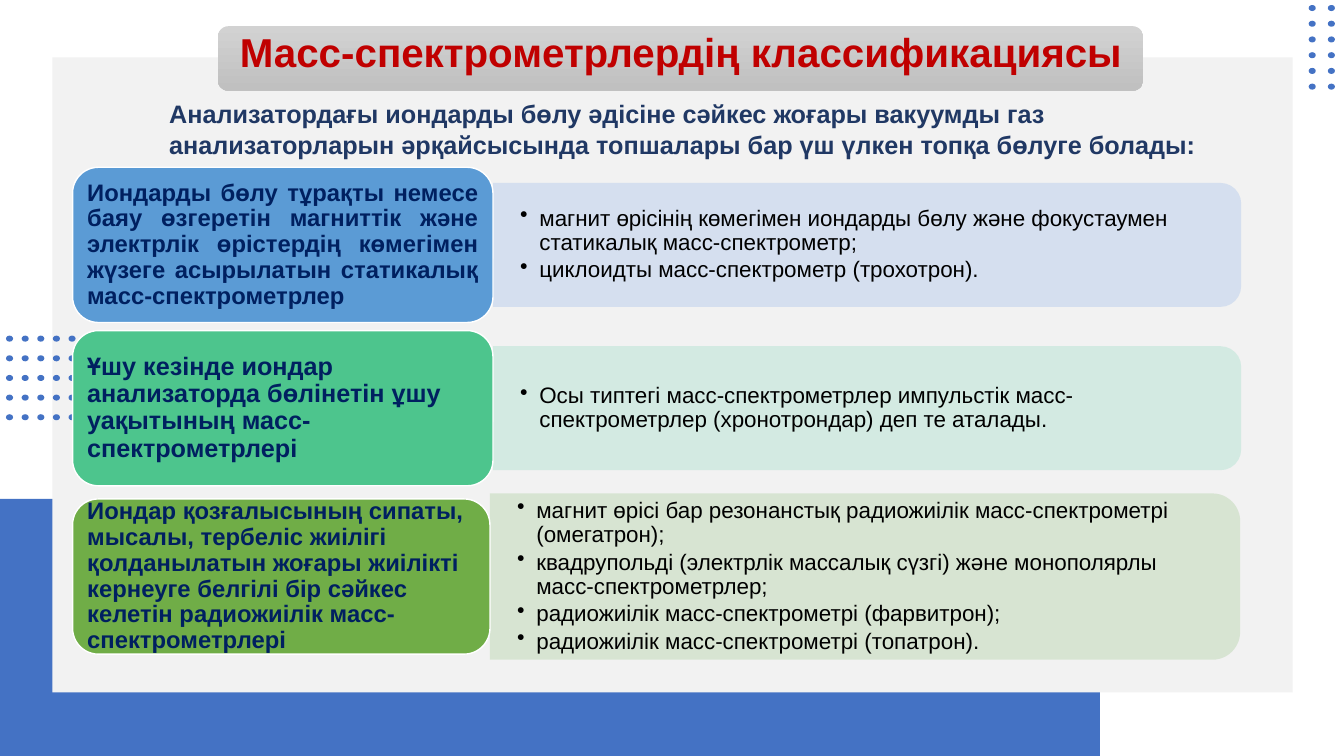
from dataclasses import dataclass

import pptx
import pptx.dml.color
import pptx.enum.shapes
import pptx.enum.text
import pptx.util
from lxml import etree
from pptx.util import Inches

SHAPES = pptx.enum.shapes.MSO_SHAPE
ALIGN = pptx.enum.text.PP_ALIGN
ANCHOR = pptx.enum.text.MSO_ANCHOR


@dataclass(frozen=True)
class Theme:
    font: str = "Arial"
    accent: str = "4472C4"
    sheet: str = "F2F2F2"
    white: str = "FFFFFF"
    banner: tuple = ("D2D2D2", "C0C0C0")
    title: str = "C00000"
    intro: str = "203864"
    card_text: str = "002060"
    black: str = "000000"
    title_size: float = 28.8
    intro_size: float = 18
    bullet_size: float = 16


THEME = Theme()
CARD_LEFT, CARD_HEIGHT = 0.72, 1.54

# Each row: middle, card width, card colour, card type size, alignment, card text,
# panel width, panel height, panel colour, bullets
ROWS = [
    (2.43, 4.17, "5B9BD5", 17, ALIGN.JUSTIFY,
     "Иондарды бөлу тұрақты немесе баяу өзгеретін магниттік және электрлік өрістердің "
     "көмегімен жүзеге асырылатын статикалық масс-спектрометрлер",
     7.42, 1.23, "D2DEEF",
     ["магнит өрісінің көмегімен иондарды бөлу және фокустаумен статикалық масс-спектрометр;",
      "циклоидты масс-спектрометр (трохотрон)."]),
    (4.05, 4.17, "4DC58D", 18, ALIGN.LEFT,
     "Ұшу кезінде иондар анализаторда бөлінетін ұшу уақытының масс-спектрометрлері",
     7.42, 1.23, "D0EAE1",
     ["Осы типтегі масс-спектрометрлер импульстік масс-спектрометрлер (хронотрондар) "
      "деп те аталады."]),
    (5.72, 4.14, "70AD47", 17, ALIGN.LEFT,
     "Иондар қозғалысының сипаты, мысалы, тербеліс жиілігі қолданылатын жоғары жиілікті "
     "кернеуге белгілі бір сәйкес келетін радиожиілік масс-спектрометрлері",
     7.44, 1.65, "D5E3CF",
     ["магнит өрісі бар резонанстық радиожиілік масс-спектрометрі (омегатрон);",
      "квадрупольді (электрлік массалық сүзгі) және монополярлы масс-спектрометрлер;",
      "радиожиілік масс-спектрометрі (фарвитрон);",
      "радиожиілік масс-спектрометрі (топатрон)."]),
]


def rgb(code):
    return pptx.dml.color.RGBColor.from_string(code)


def add_block(page, kind, left, top, width, height, fill, line=None):
    block = page.shapes.add_shape(kind, Inches(left), Inches(top), Inches(width), Inches(height))
    block.shadow.inherit = False
    block.fill.solid()
    block.fill.fore_color.rgb = rgb(fill)
    if line:
        block.line.color.rgb = rgb(line)
        block.line.width = pptx.util.Pt(1)
    else:
        block.line.fill.background()
    return block


def add_box(page, left, top, width, height):
    return page.shapes.add_textbox(Inches(left), Inches(top), Inches(width), Inches(height))


def set_frame(box, side=0.1, edge=0.05, anchor=ANCHOR.MIDDLE):
    frame = box.text_frame
    frame.word_wrap = True
    frame.vertical_anchor = anchor
    frame.margin_left = frame.margin_right = Inches(side)
    frame.margin_top = frame.margin_bottom = Inches(edge)
    return frame


def write(para, text, size, color, bold=True, align=ALIGN.LEFT, spacing=0.9, after=0):
    para.alignment = align
    para.line_spacing = spacing
    para.space_after = pptx.util.Pt(after)
    span = para.add_run()
    span.text = text
    span.font.name = THEME.font
    span.font.size = pptx.util.Pt(size)
    span.font.bold = bold
    span.font.color.rgb = rgb(color)


def add_bullet(para):
    props = para._p.get_or_add_pPr()
    props.set("marL", str(Inches(0.19)))
    props.set("indent", str(-Inches(0.19)))
    mark = etree.SubElement(props, pptx.oxml.ns.qn("a:buChar"))
    mark.set("char", "•")


def add_dots(page, left, top, columns, rows, step_x, step_y):
    for column in range(columns):
        for row in range(rows):
            add_block(page, SHAPES.OVAL, left + column * step_x, top + row * step_y,
                      0.07, 0.06, THEME.accent)


def add_banner(page):
    banner = add_block(page, SHAPES.ROUNDED_RECTANGLE, 2.16, 0.26, 9.18, 0.64, THEME.banner[0])
    banner.fill.gradient()
    banner.fill.gradient_angle = 270
    for stop, code in zip(banner.fill.gradient_stops, THEME.banner):
        stop.color.rgb = rgb(code)
    frame = set_frame(add_box(page, 2.01, 0.2, 9.49, 0.68))
    write(frame.paragraphs[0], "Масс-спектрометрлердің классификациясы",
          THEME.title_size, THEME.title, align=ALIGN.CENTER)


def add_panel(page, left, middle, width, height, color, bullets):
    # The shape is turned a quarter so that its round corners face right
    panel = add_block(page, SHAPES.ROUND_2_SAME_RECTANGLE, left + (width - height) / 2,
                      middle - width / 2, height, width, color)
    panel.rotation = 90
    fill_color = panel.fill._xPr.find(".//" + pptx.oxml.ns.qn("a:srgbClr"))
    etree.SubElement(fill_color, pptx.oxml.ns.qn("a:alpha")).set("val", "90000")
    text_height = height * 0.9
    frame = set_frame(add_box(page, left, middle - text_height / 2, 7.36, text_height), 0.27, 0.04)
    for index, text in enumerate(bullets):
        para = frame.add_paragraph() if index else frame.paragraphs[0]
        write(para, text, THEME.bullet_size, THEME.black, bold=False, after=2.4)
        add_bullet(para)


def add_card(page, middle, width, color, size, align, text):
    card = add_block(page, SHAPES.ROUNDED_RECTANGLE, CARD_LEFT, middle - CARD_HEIGHT / 2,
                     width, CARD_HEIGHT, color, THEME.white)
    frame = set_frame(card, 0.07, 0.04)
    write(frame.paragraphs[0], text, size, THEME.card_text, align=align, after=6)


def main():
    deck = pptx.Presentation()
    deck.slide_width, deck.slide_height = Inches(13.33), Inches(7.5)
    page = deck.slides.add_slide(deck.slide_layouts[6])

    # Backdrop
    add_block(page, SHAPES.RECTANGLE, 0, 4.95, 10.91, 2.55, THEME.accent)
    add_block(page, SHAPES.RECTANGLE, 0.52, 0.57, 12.3, 6.3, THEME.sheet)
    add_dots(page, 12.98, 0.05, 2, 6, 0.19, 0.156)
    add_dots(page, 0.06, 3.33, 5, 5, 0.155, 0.195)

    # Heading and introduction
    add_banner(page)
    intro = set_frame(add_box(page, 1.58, 0.93, 10.65, 0.71), anchor=ANCHOR.TOP)
    write(intro.paragraphs[0],
          "Анализатордағы иондарды бөлу әдісіне сәйкес жоғары вакуумды газ анализаторларын "
          "әрқайсысында топшалары бар үш үлкен топқа бөлуге болады:",
          THEME.intro_size, THEME.intro, spacing=1.0)

    # Three groups of spectrometers
    for (middle, card_width, card_color, size, align, text,
         panel_width, panel_height, panel_color, bullets) in ROWS:
        add_panel(page, CARD_LEFT + card_width, middle, panel_width, panel_height,
                  panel_color, bullets)
        add_card(page, middle, card_width, card_color, size, align, text)

    deck.save("out.pptx")


if __name__ == "__main__":
    main()
